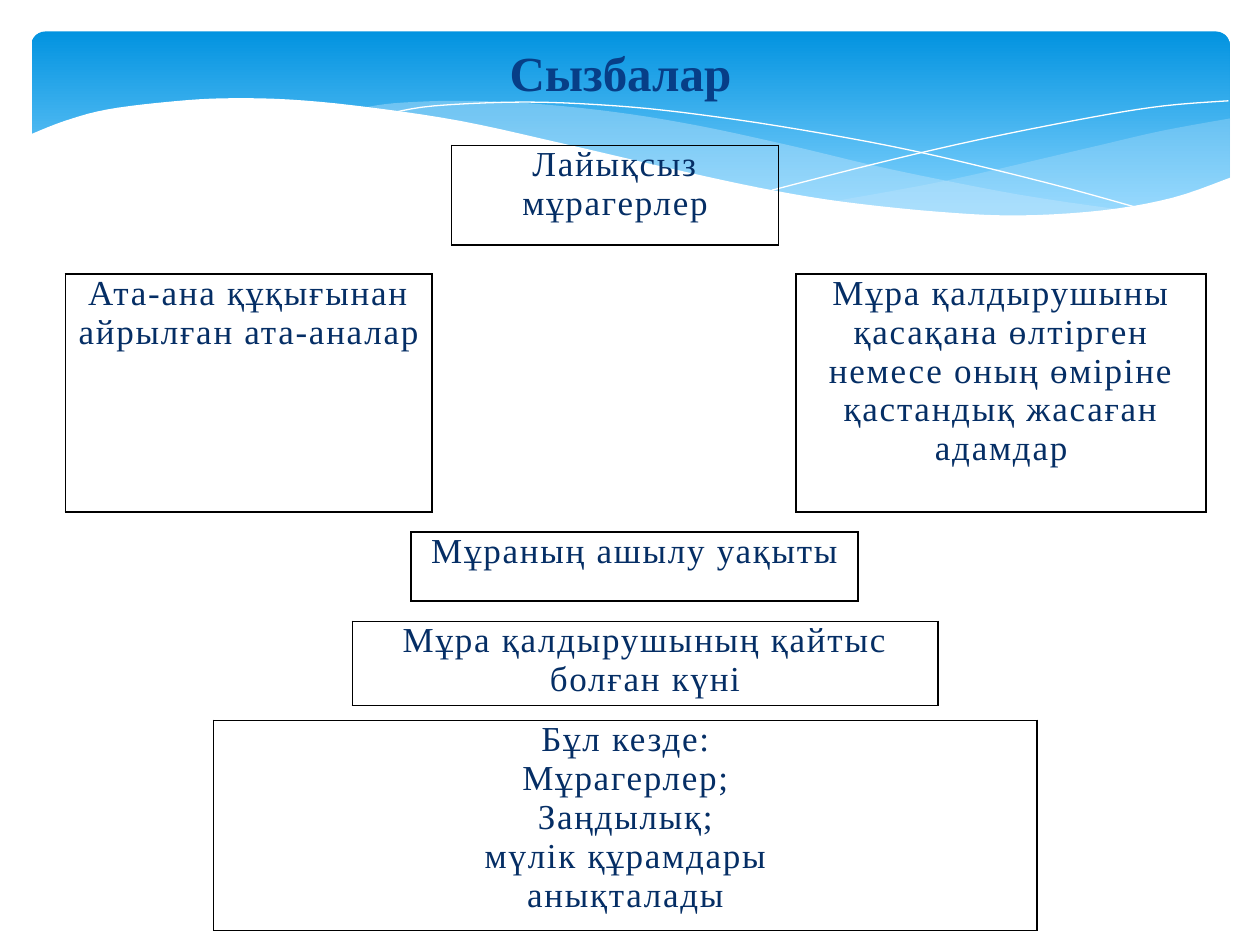
from lxml.etree import SubElement as Sub
from pptx import Presentation
from pptx.dml.color import RGBColor as RGB
from pptx.enum.shapes import MSO_SHAPE as SHAPE
from pptx.enum.text import PP_ALIGN as ALIGN
from pptx.oxml.ns import qn
from pptx.util import Pt

FONT = "Times New Roman"
HUES = {"deep": "0293E0", "light": "83D3FE", "mist": "C6E7FC",
        "white": "FFFFFF", "title": "073E87", "text": "052E65",
        "edge": "000000"}

# Outlines are lists of curves, in points from the corner of the band.
RIGHT = [[(685, 49.7), (645, 57), (602, 67), (524, 85), (458, 97.2)],
         [(458, 97.2), (500, 102.2), (536, 105.1), (568, 105.8),
          (603, 104.4), (639, 98.6), (665, 91.4), (685, 83.5)]]
MIDDLE = [[(625, 102.2), (563, 93), (490, 78.5), (435, 65.5), (382, 54),
           (334, 46.1), (284, 41), (242, 39.6), (207, 41), (188, 43.9)],
          [(188, 43.9), (228, 49.7), (273, 58.3), (336, 72.7), (390, 85),
           (450, 95.8), (502, 103), (547, 105.8), (585, 105.8),
           (625, 102.2)]]
ARC = [[(204.5, 46.8), (230, 42.5), (282, 40.3), (334, 42.5), (382, 47.5),
        (440, 56.2), (505, 68.4), (580, 86.4), (635, 101.5)]]
RISE = [[(423, 90.7), (482, 75.6), (541, 61.9), (606, 49), (647, 42.5),
         (684, 39.6)]]
FRONT = [[(685, 83.5), (652, 95), (612, 102.2), (564, 105.1), (518, 103),
          (463, 97.2), (416, 89.3), (363, 77.8), (304, 64.1), (245, 51.1),
          (192, 43.2), (148, 38.9), (109, 38.2), (77, 40.3), (43, 44.6),
          (19, 51.1), (-1, 59)],
         [(-1, 143), (685, 143)]]

# Each table: left, top, height, column widths, cells (None is a gap).
TABLES = [
    (258, 83, 57, [187], ["Лайықсыз мұрагерлер"]),
    (37.3, 156.6, 136.1, [209.6, 208.1, 234.3],
     ["Ата-ана құқығынан айрылған ата-аналар", None,
      "Мұра қалдырушыны қасақана өлтірген немесе оның өміріне "
      "қастандық жасаған адамдар"]),
    (235, 304, 39.5, [255.2], ["Мұраның ашылу уақыты"]),
    (201.3, 355, 48.2, [334.7], ["Мұра қалдырушының қайтыс болған күні"]),
    (122, 411.7, 120, [470.7],
     ["Бұл кезде:\nМұрагерлер;\nЗаңдылық;\nмүлік құрамдары\nанықталады"]),
]


def hue(name):
    return RGB.from_string(HUES[name])


def smooth(pts, steps=5):
    """Run a Catmull-Rom curve through the points."""
    ends = [pts[0], *pts, pts[-1]]
    out = [pts[0]]
    for a, b, c, d in zip(ends, ends[1:], ends[2:], ends[3:]):
        for i in range(1, steps + 1):
            t = i / steps
            out.append(tuple(
                q + t * (r - p) / 2
                + t ** 2 * (2 * p - 5 * q + 4 * r - s) / 2
                + t ** 3 * (3 * q - p - 3 * r + s) / 2
                for p, q, r, s in zip(a, b, c, d)))
    return out


def add_wave(shapes, left, top, curves, fill=None, alpha=100):
    """Draw a filled wave, or an open white line when fill is None."""
    pts = [(Pt(left + x), Pt(top + y))
           for curve in curves for x, y in smooth(curve)]
    pen = shapes.build_freeform(*pts[0])
    pen.add_line_segments(pts[1:], close=fill is not None)
    wave = pen.convert_to_shape()
    wave.shadow.inherit = False
    if fill is None:
        wave.fill.background()
        wave.line.color.rgb = hue("white")
        wave.line.width = Pt(0)
        return
    wave.fill.solid()
    wave.fill.fore_color.rgb = hue(fill)
    wave.line.fill.background()
    if alpha < 100:
        tint = wave.fill._xPr.find(".//" + qn("a:srgbClr"))
        Sub(tint, qn("a:alpha"), val=str(alpha * 1000))


def add_band(shapes, left, top, width, height):
    band = shapes.add_shape(SHAPE.ROUNDED_RECTANGLE, Pt(left), Pt(top),
                            Pt(width), Pt(height))
    band.adjustments[0] = 0.07
    band.shadow.inherit = False
    band.line.fill.background()
    band.fill.gradient()
    band.fill.gradient_angle = 270
    stops = band.fill.gradient_stops
    for stop, name, place in zip(stops, ("deep", "light"), (0, 0.9)):
        stop.color.rgb = hue(name)
        stop.position = place
    add_wave(shapes, left, top, RIGHT, "mist", 29)
    add_wave(shapes, left, top, MIDDLE, "mist", 40)
    add_wave(shapes, left, top, ARC)
    add_wave(shapes, left, top, RISE)
    add_wave(shapes, left, top, FRONT, "white")


def style(para, size, name, bold=False):
    para.alignment = ALIGN.CENTER
    for run in para.runs:
        font = run.font
        font.name, font.size, font.bold = FONT, Pt(size), bold
        font.color.rgb = hue(name)


def add_title(shapes, left, top, width, height):
    box = shapes.add_textbox(Pt(left), Pt(top), Pt(width), Pt(height))
    frame = box.text_frame
    frame.word_wrap = True
    frame.text = "Сызбалар"
    para = frame.paragraphs[0]
    para.space_before = Pt(5.6)
    style(para, 28, "title", True)


def set_edges(cell, sides):
    props = cell._tc.get_or_add_tcPr()
    for side in "LRTB":
        line = Sub(props, qn("a:ln" + side), w=str(Pt(1)))
        if side in sides:
            paint = Sub(line, qn("a:solidFill"))
            Sub(paint, qn("a:srgbClr"), val=HUES["edge"])
        else:
            Sub(line, qn("a:noFill"))


def add_grid(shapes, left, top, height, widths, texts):
    """Add a one-row table of centred texts."""
    table = shapes.add_table(1, len(widths), Pt(left), Pt(top),
                             Pt(sum(widths)), Pt(height)).table
    table.first_row = table.horz_banding = False
    for col, width in zip(table.columns, widths):
        col.width = Pt(width)
    for cell, text in zip(table.rows[0].cells, texts):
        set_edges(cell, "LRTB" if text else "LR")
        cell.fill.background()
        cell.margin_left = cell.margin_right = Pt(5)
        cell.margin_top = cell.margin_bottom = 0
        if text:
            cell.text_frame.text = text
        for para in cell.text_frame.paragraphs:
            style(para, 20, "text")
            for run in para.runs:
                run.font._element.set("spc", "100")


def main():
    deck = Presentation()
    deck.slide_width, deck.slide_height = Pt(720), Pt(540)
    shapes = deck.slides.add_slide(deck.slide_layouts[6]).shapes
    add_band(shapes, 18, 18, 684.7, 112.3)
    add_title(shapes, 20, 21, 669, 499)
    for row in TABLES:
        add_grid(shapes, *row)
    deck.save("out.pptx")


if __name__ == "__main__":
    main()
